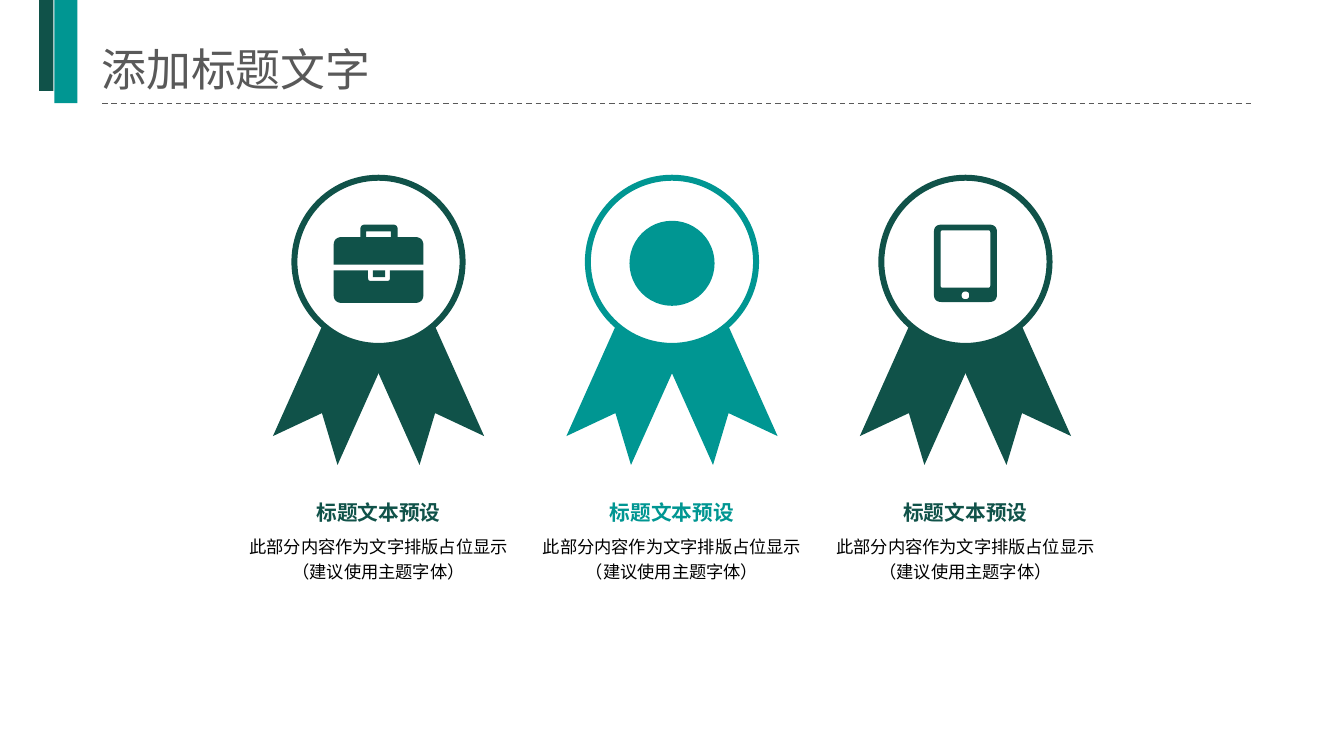
from lxml.etree import SubElement
from pptx import Presentation
from pptx.dml.color import RGBColor
from pptx.enum.dml import MSO_LINE
from pptx.enum.shapes import MSO_CONNECTOR, MSO_SHAPE
from pptx.enum.text import MSO_ANCHOR, MSO_AUTO_SIZE, PP_ALIGN
from pptx.oxml.ns import qn
from pptx.util import Inches, Pt

DARK, TEAL, GREY = "105249", "009692", "595959"
HEADING = "标题文本预设"
BODY = "此部分内容作为文字排版占位显示\n（建议使用主题字体）"
MEDAL_Y = 2.74


def colour(code):
    return RGBColor.from_string(code)


def block(left, top, right, bottom, radius=0):
    return [(left, top, radius), (right, top, radius),
            (right, bottom, radius), (left, bottom, radius)]


def rounded(corners):
    points = []
    for index, (x, y, radius) in enumerate(corners):
        if not radius:
            points.append((x, y))
            continue
        ends = []
        for near_x, near_y, _ in (corners[index - 1], corners[(index + 1) % len(corners)]):
            share = radius / max(abs(near_x - x), abs(near_y - y))
            ends.append((x + (near_x - x) * share, y + (near_y - y) * share))
        (start_x, start_y), (end_x, end_y) = ends
        for step in range(7):
            t = step / 6
            a, b, c = (1 - t) ** 2, 2 * t * (1 - t), t ** 2
            points.append((a * start_x + b * x + c * end_x,
                           a * start_y + b * y + c * end_y))
    return points


BRIEFCASE = [
    [(-0.47, 0.03, 0), (-0.47, -0.26, 0.09), (-0.19, -0.26, 0), (-0.19, -0.39, 0.05),
     (0.2, -0.39, 0.05), (0.2, -0.26, 0), (0.47, -0.26, 0.09), (0.47, 0.03, 0)],
    [(0.47, 0.09, 0), (0.47, 0.43, 0.09), (-0.47, 0.43, 0.09), (-0.47, 0.09, 0),
     (-0.11, 0.09, 0), (-0.11, 0.2, 0.03), (0.12, 0.2, 0.03), (0.12, 0.09, 0)],
    block(-0.13, -0.32, 0.13, -0.26),
    block(-0.06, 0.09, 0.07, 0.16),
]
TABLET = [
    block(-0.33, -0.39, 0.33, 0.42, 0.08),
    block(-0.26, -0.33, 0.26, 0.27, 0.02),
    block(-0.04, 0.31, 0.04, 0.39, 0.04),
]


class Page:
    font = "Arial"
    title_font = "Noto Sans CJK SC"

    def __init__(self, slide):
        self.slide = slide
        self.shapes = slide.shapes

    def start_group(self):
        self.shapes = self.slide.shapes.add_group_shape().shapes

    def end_group(self):
        self.shapes = self.slide.shapes

    def paint(self, shape, fill, line=None, width=0):
        shape.shadow.inherit = False
        shape.fill.solid()
        shape.fill.fore_color.rgb = colour(fill)
        if line:
            shape.line.color.rgb = colour(line)
            shape.line.width = Pt(width)
        else:
            shape.line.fill.background()
        return shape

    def shape(self, kind, left, top, width, height, fill, line=None, line_width=0):
        shape = self.shapes.add_shape(
            kind, Inches(left), Inches(top), Inches(width), Inches(height))
        return self.paint(shape, fill, line, line_width)

    def ribbon(self, centre, angle, fill):
        tail = self.shape(MSO_SHAPE.NOTCHED_RIGHT_ARROW, centre - 0.935, 3.49, 1.87, 0.74, fill)
        tail.adjustments[0] = 1
        tail.adjustments[1] = 0.58
        tail.rotation = angle

    def icon(self, centre, outlines, fill):
        builder = None
        for outline in outlines:
            points = [(Inches(centre + x), Inches(MEDAL_Y + y)) for x, y in rounded(outline)]
            if builder is None:
                builder = self.shapes.build_freeform(*points[0])
            else:
                builder.move_to(*points[0])
            builder.add_line_segments(points[1:], close=True)
        self.paint(builder.convert_to_shape(), fill)

    def format(self, para, font, size, code, bold, align, spacing):
        para.alignment = align
        para.line_spacing = spacing
        for span in para.runs:
            span.font.size = Pt(size)
            span.font.bold = bold
            span.font.color.rgb = colour(code)
            span.font.name = font
            SubElement(span.font._element, qn("a:ea")).set("typeface", font)

    def text(self, words, left, top, width, height, size, code, bold=False, spacing=1.0):
        box = self.shapes.add_textbox(Inches(left), Inches(top), Inches(width), Inches(height))
        frame = box.text_frame
        frame.word_wrap = True
        frame.vertical_anchor = MSO_ANCHOR.MIDDLE
        frame.margin_left = frame.margin_right = 0
        frame.margin_top = frame.margin_bottom = 0
        para = frame.paragraphs[0]
        para.text = words
        self.format(para, self.font, size, code, bold, PP_ALIGN.CENTER, spacing)

    def title(self, words):
        box = self.slide.shapes.title
        box.left, box.top = Inches(0.96), Inches(0.44)
        box.width, box.height = Inches(7.05), Inches(0.63)
        frame = box.text_frame
        frame.text = words
        frame.auto_size = MSO_AUTO_SIZE.NONE
        frame.vertical_anchor = MSO_ANCHOR.MIDDLE
        self.format(frame.paragraphs[0], self.title_font, 33.8, GREY, False, PP_ALIGN.LEFT, 0.9)

    def dashed_line(self, left, right, y):
        rule = self.shapes.add_connector(
            MSO_CONNECTOR.STRAIGHT, Inches(left), Inches(y), Inches(right), Inches(y))
        rule.line.color.rgb = colour(GREY)
        rule.line.width = Pt(1)
        rule.line.dash_style = MSO_LINE.DASH
        SubElement(rule._element.spPr, qn("a:effectLst"))

    def badge(self, centre, fill, outlines):
        self.start_group()
        self.text(BODY, centre - 1.465, 5.51, 2.93, 0.64, 13, "000000", spacing=1.2)
        self.text(HEADING, centre - 0.8, 5.2, 1.6, 0.32, 15.6, fill, bold=True)
        self.ribbon(centre + 0.385, 245.9, fill)
        self.ribbon(centre - 0.385, 294.1, fill)
        self.shape(MSO_SHAPE.OVAL, centre - 0.88, MEDAL_Y - 0.88, 1.76, 1.76, "FFFFFF", fill, 4.5)
        if outlines:
            self.icon(centre, outlines, fill)
        else:
            self.shape(MSO_SHAPE.OVAL, centre - 0.445, MEDAL_Y - 0.43, 0.89, 0.89, fill)
        self.end_group()


def main():
    deck = Presentation()
    deck.slide_width, deck.slide_height = Inches(14.06), Inches(7.91)
    page = Page(deck.slides.add_slide(deck.slide_layouts[5]))
    badges = [(DARK, BRIEFCASE), (TEAL, None), (DARK, TABLET)]
    for index, (fill, outlines) in enumerate(badges):
        page.badge(3.96 + 3.07 * index, fill, outlines)
    page.title("添加标题文字")
    page.shape(MSO_SHAPE.RECTANGLE, 0.41, 0, 0.15, 0.95, DARK)
    page.dashed_line(1.07, 13.1, 1.08)
    page.shape(MSO_SHAPE.RECTANGLE, 0.57, 0, 0.24, 1.08, TEAL)
    deck.save("out.pptx")


if __name__ == "__main__":
    main()
